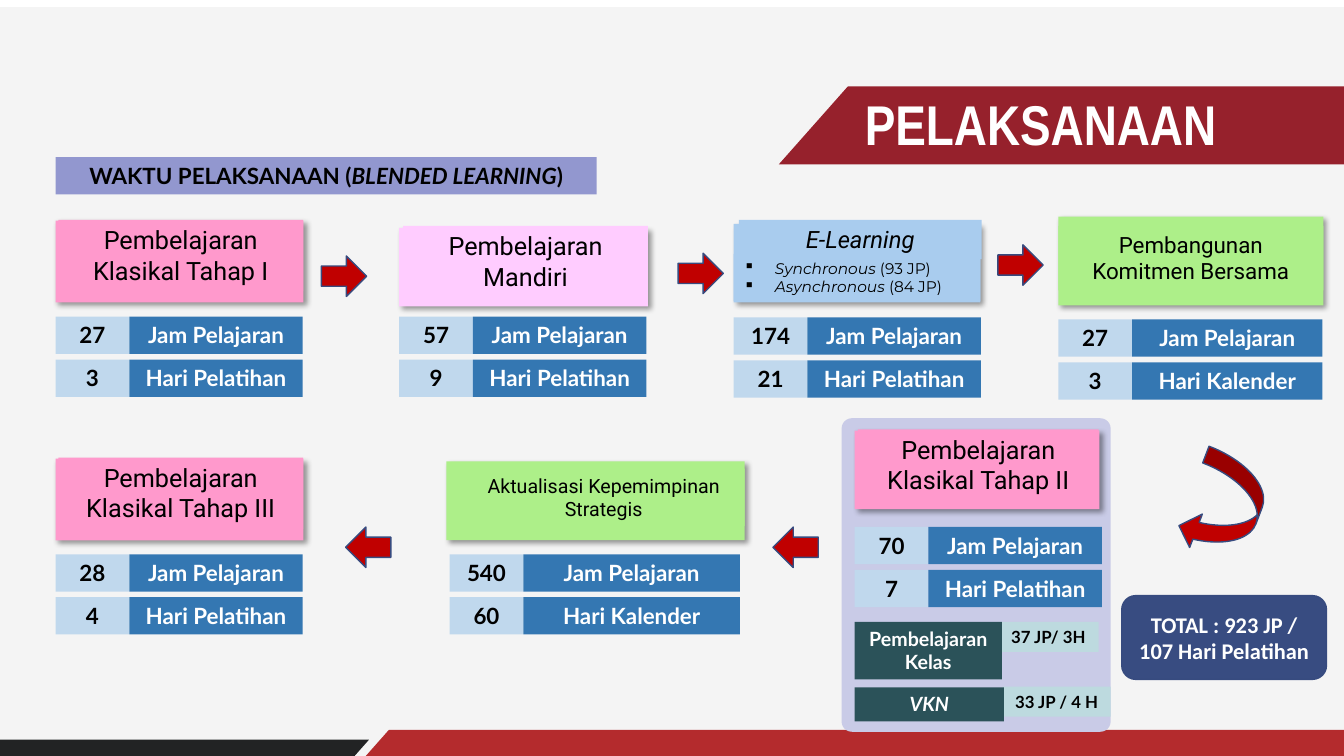
from dataclasses import dataclass

from lxml import etree
from pptx import Presentation, util as u
from pptx.dml import color
from pptx.enum import shapes, text
from pptx.oxml import ns

KIND = shapes.MSO_SHAPE
ALIGN = text.PP_ALIGN


@dataclass(frozen=True)
class Theme:
    """Hold the colours, fonts and type sizes."""
    back: str = "F2F2F2"
    red: str = "B42B2D"
    dark: str = "222324"
    wine: str = "96212C"
    panel: str = "C9CBE7"
    head: str = "9297CF"
    pink: str = "FF99CC"
    lilac: str = "FFCCFF"
    green: str = "ADEF89"
    sky: str = "A9CCEE"
    pale: str = "C0D8ED"
    blue: str = "3477B2"
    arrow: str = "C00000"
    edge: str = "374B7F"
    navy: str = "384C81"
    teal: str = "2B5259"
    mint: str = "BDDADF"
    black: str = "000000"
    white: str = "FFFFFF"
    body: str = "Lato"
    card: str = "Roboto"
    list: str = "Montserrat"
    title: str = "Arial Narrow"
    total: str = "Calibri"
    huge: float = 40
    big: float = 18
    lead: float = 17
    mid: float = 16
    small: float = 14
    note: float = 12
    tiny: float = 11


def add(node, tag, **attrs):
    """Append a drawing element to a node."""
    return etree.SubElement(node, ns.qn(tag), attrs)


def write(frame, words, font, size, ink, bold=False, align=ALIGN.CENTER,
          anchor=text.MSO_ANCHOR.TOP, bullet=None, grow=True):
    """Write lines of text, with *asterisks* around italics."""
    frame.word_wrap = True
    frame.vertical_anchor = anchor
    kind = text.MSO_AUTO_SIZE
    frame.auto_size = kind.SHAPE_TO_FIT_TEXT if grow else kind.NONE
    for row, line in enumerate(words.split("\n")):
        para = frame.add_paragraph() if row else frame.paragraphs[0]
        para.alignment = align
        if bullet:
            props = para._p.get_or_add_pPr()
            props.set("marL", str(u.Cm(0.79)))
            props.set("indent", str(-u.Cm(0.79)))
            add(props, "a:buChar", char=bullet)
        for turn, part in enumerate(line.split("*")):
            if part:
                run = para.add_run()
                run.text = part
                run.font.name = font
                run.font.size = u.Pt(size)
                run.font.bold = bold
                run.font.italic = turn % 2 == 1
                run.font.color.rgb = color.RGBColor.from_string(ink)


class Deck:
    """Draw styled elements on the current slide."""

    def __init__(self, theme):
        """Open a deck with one title-only slide."""
        self.theme = theme
        self.show = Presentation()
        self.show.slide_width = u.Cm(33.87)
        self.show.slide_height = u.Cm(19.05)
        self.slide = self.show.slides.add_slide(self.show.slide_layouts[5])

    def shape(self, box, fill, kind=KIND.RECTANGLE, edge=None, turn=0,
              adj=None, home=None):
        """Add a filled preset shape."""
        home = home or self.slide
        item = home.shapes.add_shape(kind, *map(u.Cm, box))
        item.shadow.inherit = False
        item.fill.solid()
        item.fill.fore_color.rgb = color.RGBColor.from_string(fill)
        if edge:
            item.line.color.rgb = color.RGBColor.from_string(edge)
            item.line.width = u.Pt(1)
        else:
            item.line.fill.background()
        item.rotation = turn
        if adj is not None:
            item.adjustments[0] = adj
        return item

    def label(self, box, fill, words, ink, size=None, font=None, bold=True,
              home=None, **form):
        """Add a filled rectangle with text."""
        item = self.shape(box, fill, home=home)
        write(item.text_frame, words, font or self.theme.body,
              size or self.theme.mid, ink, bold, **form)

    def back(self):
        """Add the tinted ground and the slanted footer."""
        ground = self.shape((0, 0.18, 33.87, 18.87), self.theme.back)
        tint = ground._element.spPr.find(".//" + ns.qn("a:srgbClr"))
        add(tint, "a:alpha", val="80000")
        self.slant((8.36, 18.39, 26.77, 1.63), self.theme.red)
        self.slant((-1.8, 18.64, 11.1, 1.63), self.theme.dark)

    def slant(self, box, fill):
        """Add a slanted band."""
        self.shape(box, fill, KIND.PARALLELOGRAM, adj=0.886)

    def title(self, box, words):
        """Place the title above what is drawn so far."""
        item = self.slide.shapes.title
        item.left, item.top, item.width, item.height = map(u.Cm, box)
        write(item.text_frame, words, self.theme.title, self.theme.huge,
              self.theme.white, True, ALIGN.LEFT, text.MSO_ANCHOR.MIDDLE)
        self.slide.shapes._spTree.append(item._element)

    def card(self, base, face, fill, words, size):
        """Add a stage card with a soft shadow."""
        group = self.slide.shapes.add_group_shape()
        plate = self.shape(base, fill, home=group)
        fx = plate._element.spPr.find(ns.qn("a:effectLst"))
        cast = add(fx, "a:outerShdw", blurRad=str(u.Pt(4)), dist=str(u.Pt(3)),
                   dir="2700000", algn="tl", rotWithShape="0")
        add(add(cast, "a:srgbClr", val=self.theme.black), "a:alpha", val="40000")
        self.label(face, fill, words, self.theme.black, size,
                   self.theme.card, False, home=group)
        return group

    def counts(self, left, top, hours, days, unit="Pelatihan", width=4.37):
        """Add the two rows of hours and days."""
        rows = ((hours, "Jam Pelajaran"), (days, "Hari " + unit))
        for row, (count, name) in enumerate(rows):
            y = top + row * 1.08
            self.label((left, y, 1.86, 0.94), self.theme.pale, str(count),
                       self.theme.black)
            self.label((left + 1.86, y, width, 0.94), self.theme.blue, name,
                       self.theme.white)

    def arrow(self, left, top, turn=0):
        """Add a block arrow between stages."""
        self.shape((left, top, 1.14, 1.02), self.theme.arrow,
                   KIND.RIGHT_ARROW, self.theme.edge, turn)


def main():
    """Build and save the slide."""
    t = Theme()
    deck = Deck(t)
    deck.back()
    deck.shape((21.21, 10.54, 6.78, 7.9), t.panel, KIND.ROUNDED_RECTANGLE,
               adj=0.038)
    deck.slant((19.63, 2.18, 16.15, 1.96), t.wine)
    deck.title((21.54, 2.11, 11.79, 1.96), "PELAKSANAAN")
    deck.label((1.4, 3.96, 13.64, 0.94), t.head,
               "WAKTU PELAKSANAAN (*BLENDED LEARNING*)", t.black)

    cards = (
        ((1.4, 5.56, 6.25, 2.06), (1.47, 5.54, 6.17, 1.8), t.pink,
         "Pembelajaran Klasikal Tahap I", t.big),
        ((10.06, 5.74, 6.27, 1.98), (10.16, 5.69, 6.17, 1.8), t.lilac,
         "Pembelajaran Mandiri", t.big),
        ((26.67, 5.46, 6.68, 2.24), (26.67, 5.69, 6.68, 1.63), t.green,
         "Pembangunan Komitmen Bersama", t.mid),
        ((21.54, 10.85, 6.17, 1.98), (21.62, 10.82, 6.07, 1.8), t.pink,
         "Pembelajaran Klasikal Tahap II", t.big),
        ((11.25, 11.63, 7.52, 1.98), (11.66, 11.81, 7.11, 1.45), t.green,
         "Aktualisasi Kepemimpinan Strategis", t.small),
        ((1.4, 11.56, 6.25, 2.06), (1.47, 11.53, 6.17, 1.8), t.pink,
         "Pembelajaran Klasikal Tahap III", t.big),
    )
    for card in cards:
        deck.card(*card)
    online = deck.card((18.49, 5.64, 6.22, 1.98), (18.62, 5.54, 6.12, 0.99),
                       t.sky, "*E-Learning*", t.lead)
    deck.label((18.49, 6.4, 6.22, 1.19), t.sky,
               "*Synchronous* (93 JP)\n*Asynchronous* (84 JP)", t.black,
               t.tiny, t.list, False, home=online, align=ALIGN.LEFT, bullet="▪")

    deck.counts(1.4, 7.98, 27, 3)
    deck.counts(10.06, 7.98, 57, 9)
    deck.counts(18.49, 8, 174, 21)
    deck.counts(26.67, 8.05, 27, 3, "Kalender", 4.8)
    deck.counts(21.54, 13.28, 70, 7)
    deck.counts(11.33, 13.97, 540, 60, "Kalender", 5.46)
    deck.counts(1.4, 13.97, 28, 4)

    for spot in ((8.1, 6.45), (17.09, 6.38), (25.15, 6.17),
                 (19.48, 13.28, 180), (8.71, 13.28, 180)):
        deck.arrow(*spot)
    deck.shape((29.95, 11.48, 1.8, 2.59), t.arrow, KIND.CURVED_LEFT_ARROW,
               t.edge, 20.8)

    parts = (
        ((25.15, 15.67, 2.54, 0.76), "37 JP/ 3H",
         (21.54, 15.67, 3.71, 1.45), "Pembelajaran Kelas"),
        ((25.27, 17.3, 2.72, 0.76), "33 JP / 4 H",
         (21.54, 17.32, 3.76, 0.86), "*VKN*"),
    )
    for side, time, box, name in parts:
        deck.label(side, t.mint, time, t.black, t.note)
        deck.label(box, t.teal, name, t.white, t.small)

    total = deck.shape((28.27, 15.01, 5.16, 2.11), t.navy,
                       KIND.ROUNDED_RECTANGLE, t.edge)
    write(total.text_frame, "TOTAL : 923 JP / 107 Hari Pelatihan", t.total,
          t.mid, t.white, True, anchor=text.MSO_ANCHOR.MIDDLE, grow=False)
    deck.show.save("out.pptx")


if __name__ == "__main__":
    main()
